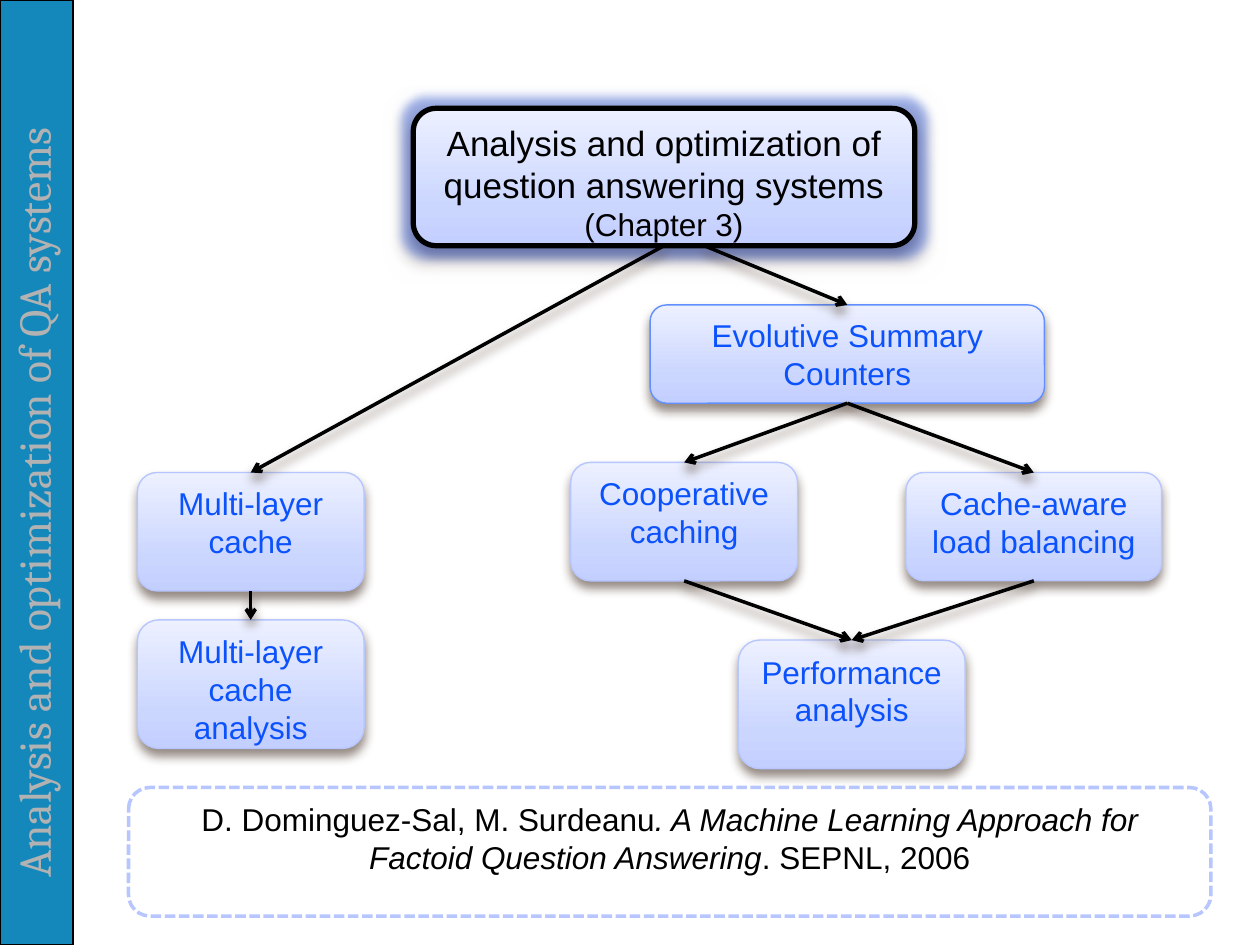
from copy import deepcopy

from lxml.etree import SubElement
from pptx import Presentation
from pptx.dml.color import RGBColor
from pptx.enum.dml import MSO_LINE
from pptx.enum.shapes import MSO_CONNECTOR, MSO_SHAPE
from pptx.enum.text import MSO_ANCHOR, PP_ALIGN
from pptx.oxml.ns import qn
from pptx.util import Inches, Pt

COLORS = {
    "bar": "1588BB", "bar_text": "B2B2B2", "black": "000000", "white": "FFFFFF",
    "top": "ECF0FF", "middle": "CBD6FF", "bottom": "C3CFFF",
    "edge": "B7C6FE", "strong_edge": "618FFD", "text": "0B52FC",
    "shadow": "4E3B30", "glow": "3A62DC",
}
BOTTOM, TOP = 2, 0


def rgb(name):
    return RGBColor.from_string(COLORS[name])


def inches(*values):
    return [Inches(v) for v in values]


class Deck:
    font = "Arial"

    def __init__(self, width, height):
        self.prs = Presentation()
        self.prs.slide_width, self.prs.slide_height = inches(width, height)
        self.s = self.prs.slides.add_slide(self.prs.slide_layouts[6])

    def effect(self, parent, tag, color, alpha, **attrs):
        node = SubElement(parent, qn(tag), {k: str(v) for k, v in attrs.items()})
        clr = SubElement(node, qn("a:srgbClr"), val=COLORS[color])
        SubElement(clr, qn("a:alpha"), val=str(alpha * 1000))

    def shadow(self, effects):
        self.effect(effects, "a:outerShdw", "shadow", 60, blurRad=Pt(6), dist=Pt(4),
                    dir=90 * 60000, rotWithShape=0)

    def gradient(self, fill):
        """Fill from top to bottom, with a third stop at 72%."""
        fill.gradient()
        fill.gradient_angle = 270
        stops = fill.gradient_stops
        for stop, name, pos in zip(stops, ("top", "middle"), (0, 0.72)):
            stop.color.rgb, stop.position = rgb(name), pos
        gs_list = fill._fill._gradFill.find(qn("a:gsLst"))
        gs_list.append(deepcopy(gs_list[-1]))
        last = fill.gradient_stops[2]
        last.color.rgb, last.position = rgb("bottom"), 1

    def text(self, sp, paragraphs, color, font=None):
        """Each paragraph is a list of (text, format values) runs."""
        tf = sp.text_frame
        tf.word_wrap, tf.vertical_anchor = True, MSO_ANCHOR.TOP
        for i, runs in enumerate(paragraphs):
            p = tf.add_paragraph() if i else tf.paragraphs[0]
            p.alignment = PP_ALIGN.CENTER
            for content, values in runs:
                r = p.add_run()
                r.text = content
                for key, value in {"name": font or self.font, "size": Pt(18), **values}.items():
                    setattr(r.font, key, value)
                r.font.color.rgb = rgb(color)

    def shape(self, kind, at, fill, edge, width):
        sp = self.s.shapes.add_shape(kind, *inches(*at))
        sp.shadow.inherit = False
        if fill:
            sp.fill.solid()
            sp.fill.fore_color.rgb = rgb(fill)
        else:
            self.gradient(sp.fill)
        sp.line.color.rgb, sp.line.width = rgb(edge), Pt(width)
        return sp

    def sidebar(self, title):
        self.shape(MSO_SHAPE.RECTANGLE, (0, 0, 0.58, 7.5), "bar", "black", 1)
        tb = self.s.shapes.add_textbox(*inches(-3.25, 3.72, 7.03, 0.54))
        tb.rotation = 270
        self.text(tb, [[(title, {"size": Pt(26)})]], "bar_text", "Cambria")

    def box(self, at, paragraphs, color="text", edge="edge", width=0.79, glow=False):
        sp = self.shape(MSO_SHAPE.ROUNDED_RECTANGLE, at, None, edge, width)
        effects = sp._element.spPr.find(qn("a:effectLst"))
        if glow:
            self.effect(effects, "a:glow", "glow", 45, rad=Pt(11))
        self.shadow(effects)
        self.text(sp, paragraphs, color)
        return sp

    def citation(self, at, runs):
        sp = self.shape(MSO_SHAPE.ROUNDED_RECTANGLE, at, "white", "edge", 2)
        sp.line.dash_style = MSO_LINE.SQUARE_DOT
        self.text(sp, [runs], "black")

    def arrow(self, start, end):
        """Run from a box's bottom, or from an (x, y) point, to a box's top."""
        from_point = isinstance(start, tuple)
        x, y = inches(*start) if from_point else (0, 0)
        cx = self.s.shapes.add_connector(MSO_CONNECTOR.STRAIGHT, x, y, x, y)
        if not from_point:
            cx.begin_connect(start, BOTTOM)
        cx.end_connect(end, TOP)
        cx.line.color.rgb, cx.line.width = rgb("black"), Pt(2)
        SubElement(cx.line._get_or_add_ln(), qn("a:tailEnd"), type="arrow")
        self.shadow(SubElement(cx._element.spPr, qn("a:effectLst")))


def main():
    deck = Deck(10, 7.5)
    deck.sidebar("Analysis and optimization of QA systems")

    root = deck.box(
        (3.28, 0.86, 3.98, 1.09),
        [[("Analysis and optimization of question answering systems", {"size": Pt(20)})],
         [("(Chapter 3)", {})]],
        color="black", edge="black", width=3, glow=True)

    topics = {
        "Multi-layer cache": (1.09, 3.75, 1.8, 0.94),
        "Cooperative caching": (4.53, 3.67, 1.8, 0.94),
        "Cache-aware load balancing": (7.19, 3.75, 2.03, 0.86),
        "Evolutive Summary Counters": (5.16, 2.42, 3.13, 0.78),
        "Performance analysis": (5.86, 5.08, 1.8, 1.02),
        "Multi-layer cache analysis": (1.09, 4.92, 1.8, 1.02),
    }
    cache, cooperative, balancing, counters, performance, cache_analysis = [
        deck.box(at, [[(label, {})]],
                 edge="strong_edge" if label.startswith("Evolutive") else "edge")
        for label, at in topics.items()]

    for start, end in [
        (counters, cooperative), (counters, balancing), ((5.59, 1.95), counters),
        (cooperative, performance), (balancing, performance),
        (root, cache), (cache, cache_analysis),
    ]:
        deck.arrow(start, end)

    deck.citation((1.02, 6.25, 8.59, 1.02), [
        ("D. Dominguez-Sal, M. Surdeanu", {}),
        (". A Machine Learning Approach for Factoid Question Answering", {"italic": True}),
        (". SEPNL, 2006", {}),
    ])
    deck.prs.save("out.pptx")


if __name__ == "__main__":
    main()
